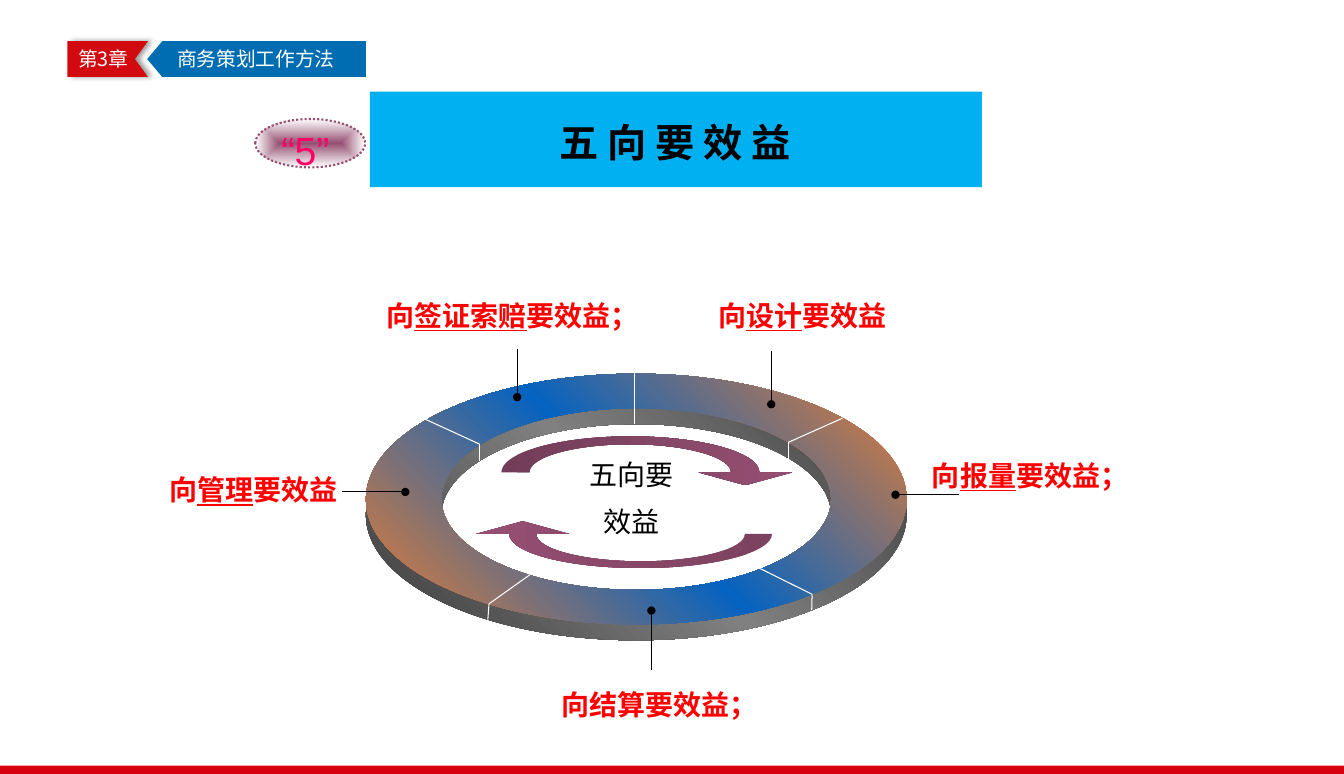
import itertools
import math

import pptx
import pptx.dml.color
import pptx.enum.dml
import pptx.enum.shapes
import pptx.enum.text
import pptx.oxml
import pptx.oxml.ns
import pptx.util

Cm, Pt = pptx.util.Cm, pptx.util.Pt
qn = pptx.oxml.ns.qn
Preset = pptx.enum.shapes.MSO_SHAPE
Align = pptx.enum.text.PP_ALIGN
Anchor = pptx.enum.text.MSO_ANCHOR
CJK = "Noto Sans CJK SC"
XMLNS = pptx.oxml.ns.nsdecls("a")


def color(value):
    return pptx.dml.color.RGBColor.from_string(value)


def style(shape, fill):
    """Flat fill, no outline, no shadow."""
    shape.shadow.inherit = False
    shape.line.fill.background()
    shape.fill.solid()
    shape.fill.fore_color.rgb = color(fill)


def add_block(page, preset, box, fill):
    shape = page.shapes.add_shape(preset, *map(Cm, box))
    style(shape, fill)
    return shape


def add_outline(page, contours, fill):
    """Closed freeform; a node is (x, y) or a curve (x1, y1, x2, y2, x, y), in cm."""
    contours = [[tuple(map(Cm, node)) for node in nodes] for nodes in contours]
    builder = page.shapes.build_freeform(*contours[0][0])
    for number, nodes in enumerate(contours):
        if number:
            builder.move_to(*nodes[0])
        builder.add_line_segments([node[-2:] for node in nodes[1:]], close=True)
    shape = builder.convert_to_shape()
    segments = list(shape.element.spPr.iter(qn("a:lnTo")))
    nodes = itertools.chain.from_iterable(nodes[1:] for nodes in contours)
    for segment, node in zip(segments, nodes):
        if len(node) == 6:
            points = "".join(f'<a:pt x="{x - shape.left}" y="{y - shape.top}"/>'
                             for x, y in zip(node[::2], node[1::2]))
            segment.getparent().replace(segment, pptx.oxml.parse_xml(
                f"<a:cubicBezTo {XMLNS}>{points}</a:cubicBezTo>"))
    style(shape, fill)
    return shape


def arc(center, radii, start, end):
    """Elliptical arc in quarter-turn curves, between angles in degrees."""
    quarters = round(abs(end - start) / 90)
    angles = [math.radians(start + (end - start) * i / quarters) for i in range(quarters + 1)]
    pull = 4 / 3 * math.tan((angles[1] - angles[0]) / 4)

    def point(angle, along):
        return (center[0] + radii[0] * (math.cos(angle) - along * math.sin(angle)),
                center[1] + radii[1] * (math.sin(angle) + along * math.cos(angle)))

    return [point(angles[0], 0)] + [
        point(a, pull) + point(b, -pull) + point(b, 0) for a, b in itertools.pairwise(angles)]


def set_gradient(shape, stops, direction):
    """Stops are (percent, colour); direction is the lin or path element."""
    marks = "".join(
        f'<a:gs pos="{at * 1000}"><a:srgbClr val="{value}"/></a:gs>' for at, value in stops)
    shape.fill.background()
    properties = shape.element.spPr
    properties.replace(properties.find(qn("a:noFill")), pptx.oxml.parse_xml(
        f'<a:gradFill {XMLNS} rotWithShape="1"><a:gsLst>{marks}</a:gsLst>{direction}</a:gradFill>'))


def linear(degrees):
    return f'<a:lin ang="{degrees * 60000}" scaled="0"/>'


def add_span(para, text, size, value, font=CJK, bold=False, underline=False):
    span = para.add_run()
    span.text = text
    span.font.size = Pt(size)
    span.font.bold = bold
    span.font.underline = underline
    span.font.color.rgb = color(value)
    span.font.name = font
    span.font._element.append(pptx.oxml.parse_xml(f'<a:ea {XMLNS} typeface="{font}"/>'))


def add_text_box(page, box, wrap=True):
    frame = page.shapes.add_textbox(*map(Cm, box)).text_frame
    frame.word_wrap = wrap
    frame.paragraphs[0].alignment = Align.CENTER
    return frame


def add_line(page, start, end, value, dot=False):
    line = page.shapes.add_connector(
        pptx.enum.shapes.MSO_CONNECTOR.STRAIGHT, *map(Cm, (*start, *end)))
    line.line.color.rgb = color(value)
    line.line.width = Pt(0.75)
    properties = line.element.spPr
    if dot:
        properties.find(qn("a:ln")).append(
            pptx.oxml.parse_xml(f'<a:tailEnd {XMLNS} type="oval"/>'))
    properties.append(pptx.oxml.parse_xml(f"<a:effectLst {XMLNS}/>"))


def add_chapter_header(page, box):
    left, top, width, height = box
    tab, notch, gap = 2.03, 0.33, 0.02
    right, bottom = left + tab, top + height
    chapter = add_outline(page, [[
        (left, top), (right, top), (right - notch, top + height / 2),
        (right, bottom), (left, bottom)]], "D20A10")
    chapter.element.spPr.find(qn("a:effectLst")).append(pptx.oxml.parse_xml(
        f'<a:outerShdw {XMLNS} blurRad="{Pt(4)}" dist="{Pt(3)}" dir="0" algn="l" rotWithShape="0">'
        '<a:srgbClr val="000000"><a:alpha val="40000"/></a:srgbClr></a:outerShdw>'))
    name = add_block(page, Preset.PENTAGON,
                     (right - gap, top, width - tab + gap, height), "006CB1")
    name.adjustments[0] = 0.421
    name.element.spPr.xfrm.set("flipH", "1")
    for shape, text, align, margins in (
            (chapter, "第3章", Align.CENTER, (0, 0.23)),
            (name, "商务策划工作方法", Align.LEFT, (0.57, 0.15))):
        frame = shape.text_frame
        frame.word_wrap = True
        frame.vertical_anchor = Anchor.MIDDLE
        frame.margin_left, frame.margin_right = map(Cm, margins)
        frame.margin_top = frame.margin_bottom = 0
        frame.paragraphs[0].alignment = align
        add_span(frame.paragraphs[0], text, 14.1, "FFFFFF")


def add_title(page, box):
    left, top = box[:2]
    add_block(page, Preset.RECTANGLE, box, "00B0F0")
    title = add_block(page, Preset.RECTANGLE, (left + 3.96, top + 0.53, 7.47, 1.45), "00B0F0")
    frame = title.text_frame
    frame.word_wrap = False
    frame.vertical_anchor = Anchor.MIDDLE
    frame.paragraphs[0].alignment = Align.CENTER
    add_span(frame.paragraphs[0], "五 向 要 效 益", 28, "000000", bold=True)


def add_number_badge(page, box):
    left, top = box[:2]
    badge = add_block(page, Preset.OVAL, box, "FFFFFF")
    set_gradient(badge, [(0, "954F72"), (100, "FFFFFF")],
                 '<a:path path="shape"><a:fillToRect l="50000" t="50000" r="50000" b="50000"/></a:path>')
    badge.line.color.rgb = color("954F72")
    badge.line.width = Pt(1.5)
    badge.line.dash_style = pptx.enum.dml.MSO_LINE.ROUND_DOT
    frame = add_text_box(page, (left + 0.33, top + 0.07, 1.88, 1.45))
    add_span(frame.paragraphs[0], "“5”", 28, "FF0066", "Arial")


def add_ring(page, box):
    left, top, width, height = box
    depth, band_x, band_y = 0.4, 1.9, 0.87
    rx, ry = width / 2, (height - depth) / 2
    for drop, edge, middle in ((depth, "3B3B3B", "808080"), (0, "ED7D31", "0563C1")):
        center = (left + rx, top + ry + drop)
        ring = add_outline(page, [
            arc(center, (rx, ry), 180, 540),
            arc(center, (rx - band_x, ry - band_y), 180, -180)], middle)
        set_gradient(ring, [(0, edge), (50, middle), (100, edge)], linear(315))
    seams = [
        [(6.76, 1.27), (6.76, -0.02)],
        [(2.87, 2.19), (2.87, 1.78), (1.5, 1.15)],
        [(10.64, 2.16), (10.64, 1.73), (12.01, 1.12)],
        [(4.14, 5.06), (3.1, 5.8), (3.07, 6.2)],
        [(9.93, 4.91), (11.24, 5.56), (11.23, 5.95)]]
    for seam in seams:
        points = [(left + x, top + y) for x, y in seam]
        for start, end in itertools.pairwise(points):
            add_line(page, start, end, "FFFFFF")


def add_cycle_arrow(page, center, outer, inner, turn, dark):
    """Half-ellipse arrow; turn 0 runs over the top, 180 under the bottom."""
    side = 1 if turn == 0 else -1
    middle = (outer[0] + inner[0]) / 2
    head = [(center[0] + side * (middle + dx), center[1] + side * dy)
            for dx, dy in ((1.17, 0), (0, 0.32), (-1.17, 0))]
    arrow = add_outline(page, [
        arc(center, outer, 180 + turn, 360 + turn) + head
        + arc(center, inner, 360 + turn, 180 + turn)], "954F72")
    set_gradient(arrow, [(0, dark), (100, "954F72")], linear(turn))


def add_callout(page, box, parts, leader, wrap=True, spacing=None):
    """Label whose second part is underlined, with its dotted-end leader."""
    para = add_text_box(page, box, wrap).paragraphs[0]
    para.line_spacing = spacing
    for number, text in enumerate(parts):
        add_span(para, text, 20, "FF0000", bold=True, underline=number == 1)
    add_line(page, *leader, "000000", dot=True)


def add_center_text(page, box):
    frame = add_text_box(page, box)
    for number, text in enumerate(("五向要", "效益")):
        para = frame.add_paragraph() if number else frame.paragraphs[0]
        para.alignment = Align.CENTER
        para.space_before = Pt(10 * number)
        add_span(para, text, 20, "000000")


def main():
    deck = pptx.Presentation()
    deck.slide_width, deck.slide_height = Cm(33.86), Cm(19.51)
    page = deck.slides.add_slide(deck.slide_layouts[6])
    add_block(page, Preset.RECTANGLE, (0, 19.3, 33.86, 0.21), "D7000F")
    add_chapter_header(page, (1.7, 1.04, 7.52, 0.9))
    add_title(page, (9.32, 2.31, 15.42, 2.41))
    add_number_badge(page, (6.43, 3, 2.77, 1.22))
    add_ring(page, (9.22, 9.42, 13.62, 6.72))
    for box, parts, leader, wrap, spacing in (
            ((17.42, 7.39, 5.59, 1.09), ("向", "设计", "要效益"),
             ((19.43, 8.84), (19.43, 10.19)), True, None),
            ((8.61, 7.39, 8.61, 1.09), ("向", "签证索赔", "要效益；"),
             ((13.03, 8.79), (13.03, 10.01)), True, None),
            ((4.01, 11.79, 4.75, 1.09), ("向", "管理", "要效益"),
             ((8.61, 12.4), (10.21, 12.4)), False, None),
            ((13.82, 17.2, 5.59, 1.09), ("向结算要效益；",),
             ((16.41, 16.89), (16.41, 15.39)), True, None),
            ((23.01, 11, 5.89, 1.42), ("向", "报量", "要效益；"),
             ((24.16, 12.47), (22.56, 12.47)), True, 1.5)):
        add_callout(page, box, parts, leader, wrap, spacing)
    add_cycle_arrow(page, (15.88, 11.91), (3.25, 0.91), (2.54, 0.71), 0, "723D58")
    add_cycle_arrow(page, (16.14, 13.46), (3.31, 0.86), (2.63, 0.69), 180, "7D4260")
    add_center_text(page, (14.22, 11.4, 3.4, 2.36))
    deck.save("out.pptx")


if __name__ == "__main__":
    main()
